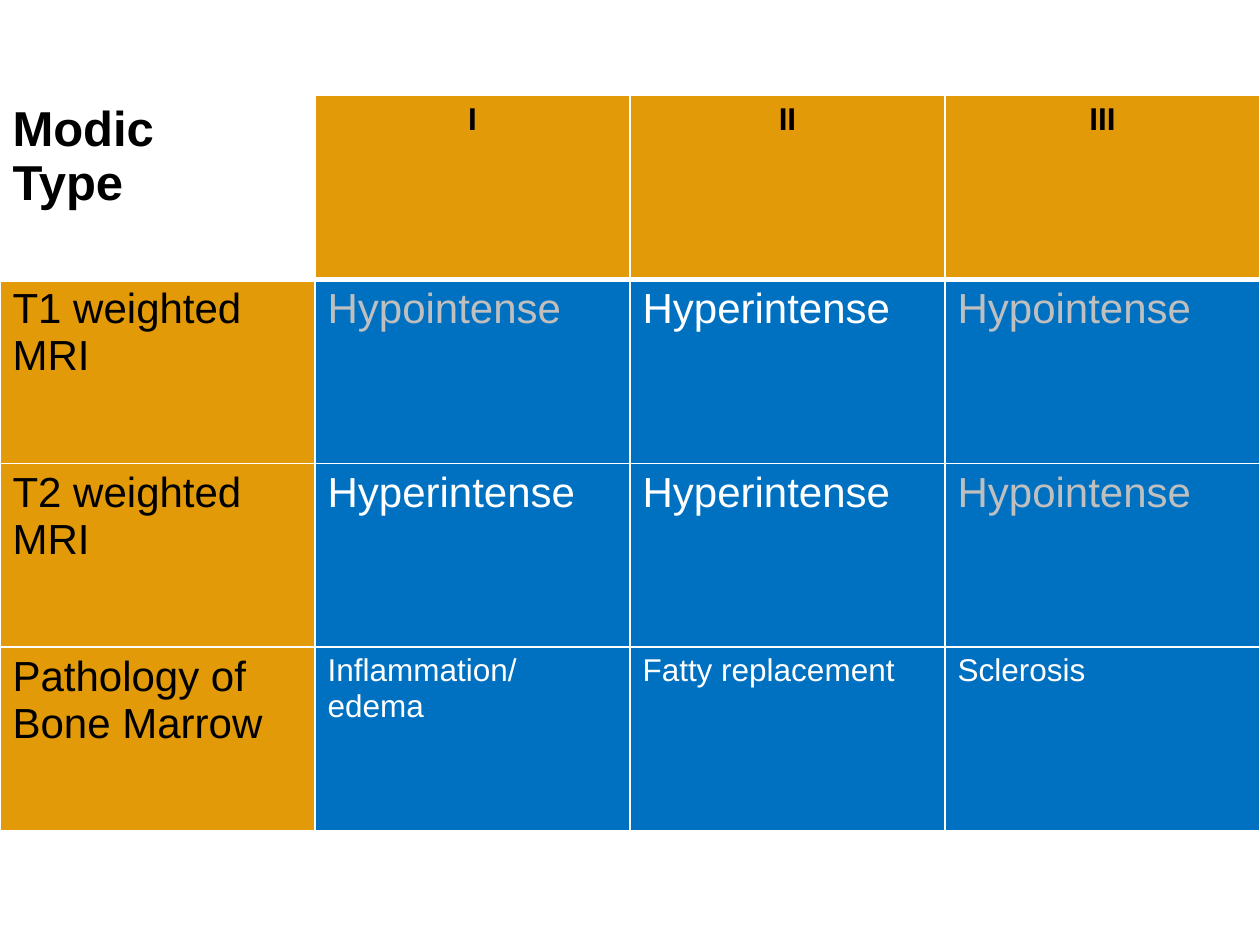
from lxml.etree import SubElement
from pptx import Presentation
from pptx.dml.color import RGBColor
from pptx.enum.text import PP_ALIGN
from pptx.oxml.ns import qn
from pptx.util import Cm, Pt

BLACK, WHITE, GREY = "000000", "FFFFFF", "BFBFBF"
ORANGE, BLUE = "E29A09", "0070C0"
HEADINGS = ["Modic\nType", "I", "II", "III"]
FINDINGS = [
    ["T1 weighted MRI", "Hypointense", "Hyperintense", "Hypointense"],
    ["T2 weighted MRI", "Hyperintense", "Hyperintense", "Hypointense"],
    ["Pathology of Bone Marrow", "Inflammation/\nedema", "Fatty replacement", "Sclerosis"],
]


def colour(value):
    """Return the colour for a hex string."""
    return RGBColor.from_string(value)


def add_borders(cell, top, bottom):
    """Draw white borders with the given top and bottom widths in points."""
    properties = cell._tc.get_or_add_tcPr()
    for side, width in (("L", 1), ("R", 1), ("T", top), ("B", bottom)):
        line = SubElement(properties, qn(f"a:ln{side}"), w=str(Pt(width)))
        fill = SubElement(line, qn("a:solidFill"))
        SubElement(fill, qn("a:srgbClr"), val=WHITE)


def cell_style(row, column, text):
    """Return the fill, text colour and text size for a place in the table."""
    if row == 0:
        return (ORANGE, BLACK, 18) if column else (WHITE, BLACK, 28)
    if column == 0:
        return ORANGE, BLACK, 24
    ink = GREY if text == "Hypointense" else WHITE
    return BLUE, ink, 18 if row == len(FINDINGS) else 24


def fill_cell(cell, row, column, text):
    """Style one cell and write its lines as paragraphs."""
    fill, ink, size = cell_style(row, column, text)
    add_borders(cell, 3 if row == 1 else 1, 3 if row == 0 else 1)
    cell.fill.solid()
    cell.fill.fore_color.rgb = colour(fill)
    for index, line in enumerate(text.split("\n")):
        frame = cell.text_frame
        para = frame.add_paragraph() if index else frame.paragraphs[0]
        para.alignment = PP_ALIGN.CENTER if row == 0 and column else PP_ALIGN.LEFT
        span = para.add_run()
        span.text = line
        span.font.name = "Arial"
        span.font.size = Pt(size)
        span.font.bold = row == 0
        span.font.color.rgb = colour(ink)


def add_modic_table(page, left, top, width, height):
    """Place the table of Modic types in the given box."""
    content = [HEADINGS, *FINDINGS]
    table = page.shapes.add_table(
        len(content), len(HEADINGS), left, top, width, height
    ).table
    for row, texts in enumerate(content):
        for column, text in enumerate(texts):
            fill_cell(table.cell(row, column), row, column, text)


def main():
    """Build the slide and save it."""
    deck = Presentation()
    deck.slide_width, deck.slide_height = Cm(25.4), Cm(19.05)
    page = deck.slides.add_slide(deck.slide_layouts[6])
    add_modic_table(page, Cm(0), Cm(1.93), deck.slide_width, Cm(14.82))
    deck.save("out.pptx")


if __name__ == "__main__":
    main()
